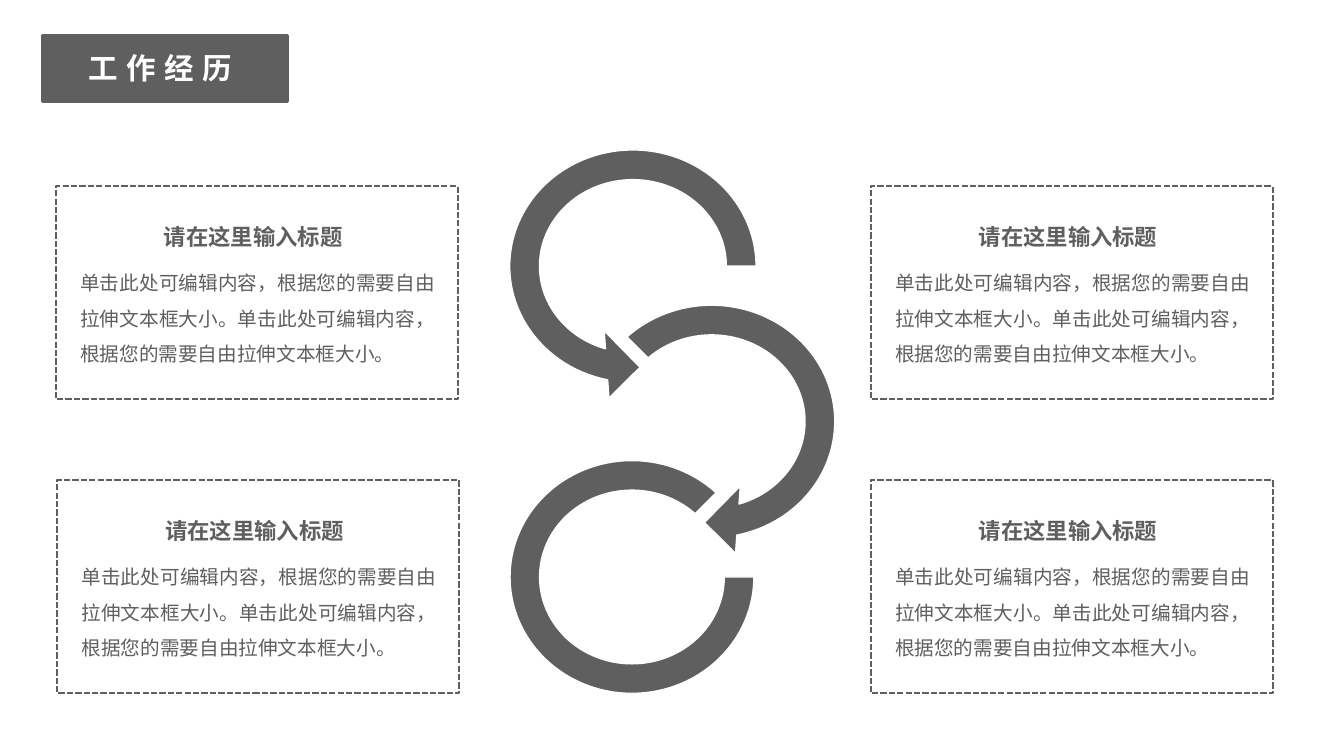
from typing import NamedTuple

from lxml.etree import SubElement
from pptx import Presentation
from pptx.dml.color import RGBColor
from pptx.enum.dml import MSO_LINE
from pptx.enum.shapes import MSO_SHAPE as Preset
from pptx.enum.text import MSO_AUTO_SIZE as AutoSize, PP_ALIGN as Align
from pptx.oxml.ns import qn
from pptx.shapes.autoshape import Shape
from pptx.shapes.shapetree import GroupShapes
from pptx.util import Pt

GRAY = RGBColor(0x5F, 0x5F, 0x5F)
WHITE = RGBColor(0xFF, 0xFF, 0xFF)
FONT = "Noto Sans CJK SC"

CARD_TITLE = "请在这里输入标题"
CARD_BODY = "单击此处可编辑内容，根据您的需要自由拉伸文本框大小。" * 2


class Box(NamedTuple):
    left: float
    top: float
    width: float
    height: float

    def lengths(self) -> list[Pt]:
        return [Pt(value) for value in self]


class Ring(NamedTuple):
    preset: Preset
    box: Box
    adjustments: tuple[float, ...]


class Card(NamedTuple):
    left: float
    top: float


RINGS = [
    Ring(Preset.CIRCULAR_ARROW, Box(350.6, 93.6, 203, 193),
         (0.11, 11.423, 45, 108, 0.125)),
    Ring(Preset.LEFT_CIRCULAR_ARROW, Box(406.8, 204.5, 203, 193),
         (0.11, 11.423, 63, 189, 0.125)),
    Ring(Preset.BLOCK_ARC, Box(364.3, 329, 174.2, 166.3), (135, 108, 0.127)),
]
CARDS = [Card(39.8, 133.2), Card(621.9, 133.2),
         Card(40.8, 343.2), Card(621.9, 343.2)]


def add_outline(shapes: GroupShapes, preset: Preset, box: Box, *,
                fill: RGBColor | None, line: RGBColor, weight: float) -> Shape:
    shape = shapes.add_shape(preset, *box.lengths())
    shape.shadow.inherit = False
    if fill is None:
        shape.fill.background()
    else:
        shape.fill.solid()
        shape.fill.fore_color.rgb = fill
    shape.line.color.rgb = line
    shape.line.width = Pt(weight)
    return shape


def add_text(shapes: GroupShapes, text: str, box: Box, *, size: float,
             color: RGBColor = GRAY, bold: bool = False, wrap: bool = True,
             align: Align | None = None, line_spacing: float | None = None,
             tracking: float = 0) -> None:
    frame = shapes.add_textbox(*box.lengths()).text_frame
    frame.word_wrap = wrap
    frame.auto_size = AutoSize.SHAPE_TO_FIT_TEXT
    paragraph = frame.paragraphs[0]
    paragraph.alignment = align
    paragraph.line_spacing = line_spacing
    run = paragraph.add_run()
    run.text = text
    run.font.name = FONT
    run.font.size = Pt(size)
    run.font.bold = bold
    run.font.color.rgb = color
    properties = run.font._element
    SubElement(properties, qn("a:ea")).set("typeface", FONT)
    if tracking:
        properties.set("spc", str(round(tracking * 100)))


def add_ring(shapes: GroupShapes, ring: Ring) -> None:
    shape = add_outline(shapes, ring.preset, ring.box,
                        fill=GRAY, line=WHITE, weight=1)
    for index, value in enumerate(ring.adjustments):
        shape.adjustments[index] = value
    shape._element.spPr.find(qn("a:xfrm")).set("flipH", "1")


def add_card(shapes: GroupShapes, card: Card) -> None:
    left, top = card
    frame = add_outline(shapes, Preset.RECTANGLE, Box(left, top, 287.3, 152),
                        fill=None, line=GRAY, weight=1.5)
    frame.line.dash_style = MSO_LINE.SQUARE_DOT
    add_text(shapes, CARD_TITLE, Box(left + 51.4, top + 22.3, 179.3, 26.6),
             size=16, bold=True, align=Align.CENTER)
    add_text(shapes, CARD_BODY, Box(left + 10.4, top + 48.7, 267.8, 83.5),
             size=14, align=Align.JUSTIFY, line_spacing=1.5)


def main() -> None:
    deck = Presentation()
    deck.slide_width, deck.slide_height = Pt(960), Pt(540)
    slide = deck.slides.add_slide(deck.slide_layouts[6])

    # Chain of rings in the middle
    chain = slide.shapes.add_group_shape().shapes
    for ring in RINGS:
        add_ring(chain, ring)

    # Section heading
    heading = slide.shapes.add_group_shape().shapes
    add_outline(heading, Preset.RECTANGLE, Box(30.2, 25.2, 175, 47.5),
                fill=GRAY, line=GRAY, weight=2.25)
    add_text(heading, "工作经历", Box(56.2, 32.4, 123.1, 33.1), size=21.1,
             color=WHITE, bold=True, wrap=False, tracking=6)

    # Dashed cards on both sides
    for card in CARDS:
        add_card(slide.shapes.add_group_shape().shapes, card)

    deck.save("out.pptx")


if __name__ == "__main__":
    main()
